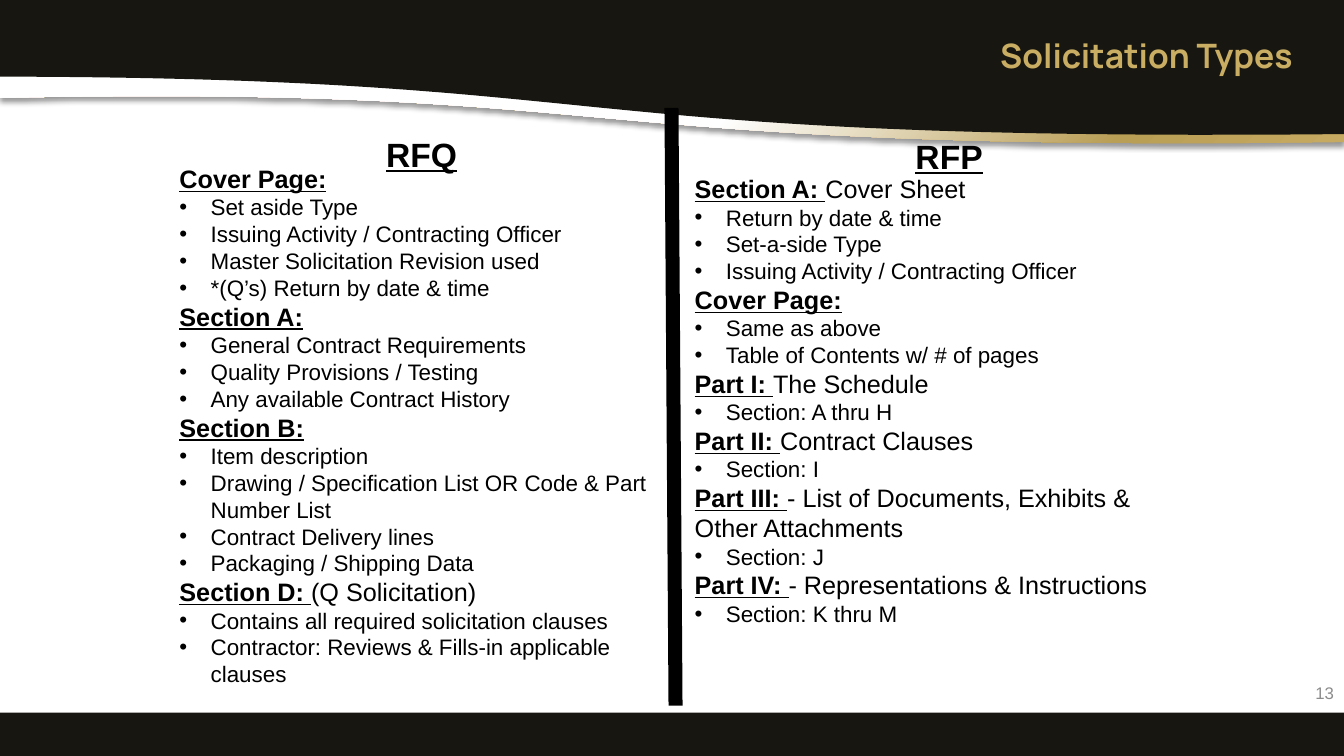
from lxml.etree import SubElement
from pptx import Presentation
from pptx.dml.color import RGBColor
from pptx.enum.shapes import MSO_CONNECTOR, MSO_SHAPE
from pptx.enum.text import MSO_ANCHOR, MSO_AUTO_SIZE, PP_ALIGN
from pptx.oxml import parse_xml
from pptx.oxml.ns import nsdecls, qn
from pptx.util import Inches, Pt

BLACK = RGBColor(0, 0, 0)
DARK = RGBColor(0x17, 0x16, 0x10)
GOLD = RGBColor(0xC9, 0xAD, 0x62)
GRAY = RGBColor(0x8C, 0x8C, 0x8C)

TITLE = "Solicitation Types"
PAGE = "13"
RFQ = [
    ("Cover Page:", "", ["Set aside Type", "Issuing Activity / Contracting Officer",
                         "Master Solicitation Revision used",
                         "*(Q’s) Return by date & time"]),
    ("Section A:", "", ["General Contract Requirements", "Quality Provisions / Testing",
                        "Any available Contract History"]),
    ("Section B:", "", ["Item description",
                        "Drawing / Specification List OR Code & Part Number List",
                        "Contract Delivery lines", "Packaging / Shipping Data"]),
    ("Section D: ", "(Q Solicitation)", ["Contains all required solicitation clauses",
                                         "Contractor: Reviews & Fills-in applicable clauses"]),
]
RFP = [
    ("Section A: ", "Cover Sheet", ["Return by date & time", "Set-a-side Type",
                                    "Issuing Activity / Contracting Officer"]),
    ("Cover Page:", "", ["Same as above", "Table of Contents w/ # of pages"]),
    ("Part I: ", "The Schedule", ["Section: A thru H"]),
    ("Part II: ", "Contract Clauses", ["Section: I"]),
    ("Part III: ", "- List of Documents, Exhibits & Other Attachments", ["Section: J"]),
    ("Part IV: ", "- Representations & Instructions", ["Section: K thru M"]),
]
COLUMNS = [
    ("RFQ", (3.73, 1.28, 0.91, 0.5), RFQ, (1.68, 1.57, 5.02, 5.65)),
    ("RFP", (8.98, 1.3, 0.88, 0.5), RFP, (6.79, 1.67, 4.79, 4.75)),
]
WAVES = [
    [(0, 0.97), (6.46, 0.84), (5.34, 1.51), (13.33, 1.41)],
    [(-0.01, 0.76), (6.42, 0.77), (5.32, 1.41), (13.33, 1.33)],
]
TOPS = [0.52, -0.01]
STOPS = [(55, "FFFFFF"), (84, "B99E55"), (100, "C7AA61")]


def write(para, text, size=16, font="Arial", color=BLACK, bold=False, under=False):
    run = para.add_run()
    run.text = text
    run.font.size = Pt(size)
    run.font.name = font
    run.font.color.rgb = color
    run.font.bold = bold
    run.font.underline = under


def place(shape, box, wrap=True, anchor=MSO_ANCHOR.TOP):
    shape.left, shape.top, shape.width, shape.height = map(Inches, box)
    frame = shape.text_frame
    frame.auto_size = MSO_AUTO_SIZE.NONE
    frame.word_wrap = wrap
    frame.vertical_anchor = anchor
    return frame


def line(frame, bullet=False, align=PP_ALIGN.LEFT):
    para = frame.paragraphs[0]
    if para.runs:
        para = frame.add_paragraph()
    props = para._p.get_or_add_pPr()
    hang = Inches(0.31) if bullet else 0
    props.set("marL", str(hang))
    props.set("indent", str(-hang))
    if bullet:
        SubElement(props, qn("a:buFont"), typeface="Arial")
        SubElement(props, qn("a:buChar"), char="•")
    else:
        SubElement(props, qn("a:buNone"))
    para.alignment = align
    para.space_before = Pt(0)
    para.line_spacing = 1.0
    return para


def plain(shape):
    shape.shadow.inherit = False
    shape.fill.solid()
    shape.fill.fore_color.rgb = DARK
    shape.line.fill.background()
    return shape


def curve(knots, steps=60):
    for step in range(steps + 1):
        t = step / steps
        mix = ((1 - t) ** 3, 3 * t * (1 - t) ** 2, 3 * t * t * (1 - t), t ** 3)
        yield tuple(Inches(sum(m * k[axis] for m, k in zip(mix, knots))) for axis in (0, 1))


def wave(shapes, knots, top):
    left, right = Inches(knots[0][0]), Inches(knots[-1][0])
    form = shapes.build_freeform(right, Inches(top))
    form.add_line_segments([(left, Inches(top)), *curve(knots)], close=True)
    return plain(form.convert_to_shape())


def gild(shape):
    props = shape._element.spPr
    stops = "".join(f'<a:gs pos="{pos * 1000}"><a:srgbClr val="{tint}"/></a:gs>'
                    for pos, tint in STOPS)
    blend = parse_xml(
        f'<a:gradFill {nsdecls("a")} rotWithShape="1"><a:gsLst>{stops}</a:gsLst>'
        '<a:path path="circle"><a:fillToRect r="100000" b="100000"/></a:path></a:gradFill>')
    props.replace(props.find(qn("a:solidFill")), blend)
    props.find(qn("a:effectLst")).append(parse_xml(
        f'<a:outerShdw {nsdecls("a")} blurRad="{Pt(4)}" dist="{Pt(3)}" dir="5400000" '
        'algn="t" rotWithShape="0"><a:srgbClr val="000000"><a:alpha val="40000"/>'
        '</a:srgbClr></a:outerShdw>'))


def main():
    deck = Presentation()
    deck.slide_width, deck.slide_height = Inches(13.33), Inches(7.5)
    slide = deck.slides.add_slide(deck.slide_layouts.get_by_name("Comparison"))
    shapes = slide.shapes
    holders = list(slide.placeholders)

    gold, dark = [wave(shapes, knots, top) for knots, top in zip(WAVES, TOPS)]
    gild(gold)
    plain(shapes.add_shape(MSO_SHAPE.RECTANGLE, 0, Inches(7.07), Inches(13.33), Inches(0.43)))
    for holder in holders:
        shapes._spTree.append(holder._element)

    frame = place(holders[0], (3.13, 0.3, 9.79, 0.41))
    write(line(frame, align=PP_ALIGN.RIGHT), TITLE, size=24, font="Manrope", color=GOLD, bold=True)

    for (name, spot, parts, box), head, body in zip(COLUMNS, holders[1::2], holders[2::2]):
        write(line(place(head, spot, wrap=False)), name, size=24, bold=True, under=True)
        frame = place(body, box)
        for label, rest, items in parts:
            para = line(frame)
            write(para, label, size=18, bold=True, under=True)
            if rest:
                write(para, rest, size=18)
            for item in items:
                write(line(frame, bullet=True), item)

    ends = map(Inches, (6.66, 1.07, 6.7, 7))
    rule = shapes.add_connector(MSO_CONNECTOR.STRAIGHT, *ends)
    rule.line.color.rgb = BLACK
    rule.line.width = Pt(10)
    SubElement(rule._element.spPr, qn("a:effectLst"))

    note = shapes.add_textbox(0, 0, 0, 0)
    frame = place(note, (10.22, 6.67, 3.11, 0.4), anchor=MSO_ANCHOR.MIDDLE)
    write(line(frame, align=PP_ALIGN.RIGHT), PAGE, size=12, color=GRAY)
    deck.save("out.pptx")


if __name__ == "__main__":
    main()
